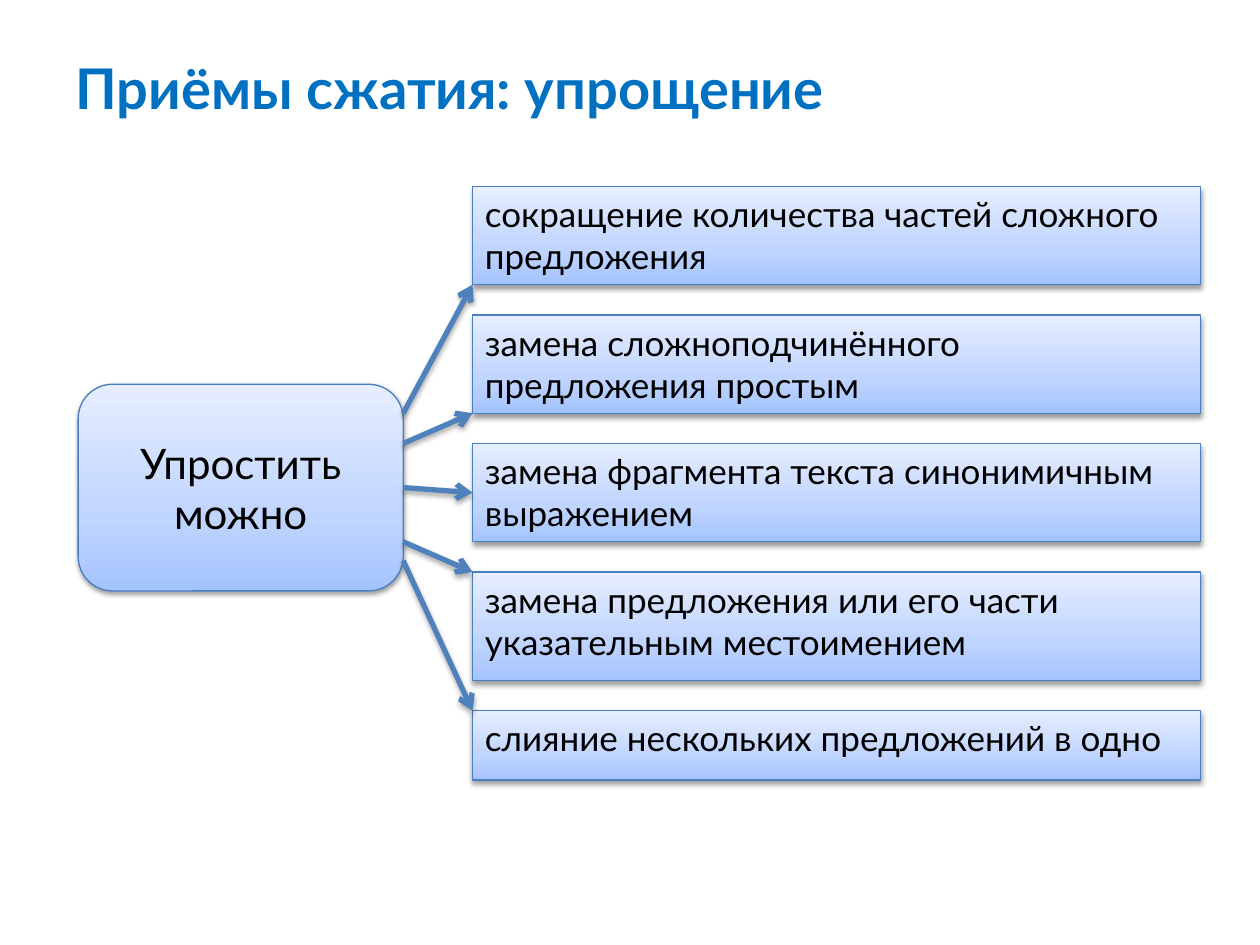
"""Build a slide that lists the ways to simplify a text."""
from pptx import Presentation
from pptx.dml.color import RGBColor
from pptx.enum.shapes import MSO_CONNECTOR, MSO_SHAPE
from pptx.enum.text import MSO_ANCHOR, PP_ALIGN
from pptx.oxml import parse_xml
from pptx.oxml.ns import nsdecls
from pptx.util import Inches, Pt

RECTANGLE, ROUNDED = MSO_SHAPE.RECTANGLE, MSO_SHAPE.ROUNDED_RECTANGLE
STRAIGHT = MSO_CONNECTOR.STRAIGHT
TOP, MIDDLE = MSO_ANCHOR.TOP, MSO_ANCHOR.MIDDLE
LEFT, CENTER = PP_ALIGN.LEFT, PP_ALIGN.CENTER
LEFT_SIDE, RIGHT_SIDE = 1, 3

BLACK = RGBColor(0x00, 0x00, 0x00)
TITLE_BLUE = RGBColor(0x00, 0x70, 0xC0)
OUTLINE_BLUE = RGBColor(0x4B, 0x7E, 0xBC)
ARROW_BLUE = RGBColor(0x4F, 0x81, 0xBD)
GRADIENT = [
    (0, RGBColor(0xA4, 0xC4, 0xFF)),
    (35, RGBColor(0xBF, 0xD4, 0xFF)),
    (100, RGBColor(0xE6, 0xEE, 0xFF)),
]

TITLE = "Приёмы сжатия: упрощение"
TOPIC = "Упростить можно"
# FIELDS
METHODS = [
    ("сокращение количества частей сложного предложения", 0.78, 3.28, 1),
    ("замена сложноподчинённого предложения простым", 0.78, 3.52, 1),
    ("замена фрагмента текста синонимичным выражением", 0.78, None, 0.5),
    ("замена предложения или его части указательным местоимением", 0.86, 4.3, 0),
    ("слияние нескольких предложений в одно", 0.55, 4.45, 0),
]
TITLE_AREA = (0.5, 0.3, 9, 0.79)
TOPIC_AREA = (0.62, 3.05, 2.58, 1.64)
METHOD_LEFT, METHOD_TOP, METHOD_WIDTH, METHOD_GAP = 3.75, 1.48, 5.78, 0.24

TITLE_FONT = {"name": "Lato", "size": Pt(32), "bold": True}
TOPIC_FONT = {"name": "Lato", "size": Pt(24)}
METHOD_FONT = {"name": "Lato", "size": Pt(20)}


def write(shape, text, font_format, color, anchor, alignment):
    frame = shape.text_frame
    frame.word_wrap = True
    frame.vertical_anchor = anchor
    paragraph = frame.paragraphs[0]
    paragraph.alignment = alignment
    run = paragraph.add_run()
    run.text = text
    for name, value in font_format.items():
        setattr(run.font, name, value)
    run.font.color.rgb = color


def add_shadow(shape, opacity, distance):
    shape._element.spPr.append(parse_xml(
        f'<a:effectLst {nsdecls("a")}><a:outerShdw blurRad="{Pt(3.1)}" '
        f'dist="{Pt(distance)}" dir="5400000" rotWithShape="0">'
        f'<a:srgbClr val="{BLACK}"><a:alpha val="{opacity * 1000}"/></a:srgbClr>'
        '</a:outerShdw></a:effectLst>'))


def add_gradient(shape):
    stops = "".join(
        f'<a:gs pos="{position * 1000}"><a:srgbClr val="{color}"/></a:gs>'
        for position, color in GRADIENT)
    shape._element.spPr.prstGeom.addnext(parse_xml(
        f'<a:gradFill {nsdecls("a")} rotWithShape="1"><a:gsLst>{stops}</a:gsLst>'
        '<a:lin ang="16200000" scaled="0"/></a:gradFill>'))


def add_box(slide, kind, area, text, font_format, anchor, alignment):
    shape = slide.shapes.add_shape(kind, *map(Inches, area))
    add_gradient(shape)
    shape.line.color.rgb = OUTLINE_BLUE
    shape.line.width = Pt(0.75)
    add_shadow(shape, 38, 1.6)
    write(shape, text, font_format, BLACK, anchor, alignment)
    return shape


def add_arrow(slide, start, end):
    arrow = slide.shapes.add_connector(STRAIGHT, *map(Inches, start + end))
    arrow.line.color.rgb = ARROW_BLUE
    arrow.line.width = Pt(3)
    arrow.line._get_or_add_ln().append(
        parse_xml(f'<a:tailEnd {nsdecls("a")} type="arrow"/>'))
    add_shadow(arrow, 35, 1.8)
    return arrow


def main():
    presentation = Presentation()
    presentation.slide_width, presentation.slide_height = Inches(10), Inches(7.5)
    slide = presentation.slides.add_slide(presentation.slide_layouts[6])

    title = slide.shapes.add_textbox(*map(Inches, TITLE_AREA))
    write(title, TITLE, TITLE_FONT, TITLE_BLUE, MIDDLE, LEFT)
    topic = add_box(slide, ROUNDED, TOPIC_AREA, TOPIC, TOPIC_FONT, MIDDLE, CENTER)

    topic_left, topic_top, topic_width, topic_height = TOPIC_AREA
    topic_right = topic_left + topic_width
    top = METHOD_TOP
    for text, height, start_y, end_share in METHODS:
        area = (METHOD_LEFT, top, METHOD_WIDTH, height)
        method = add_box(slide, RECTANGLE, area, text, METHOD_FONT, TOP, LEFT)
        joined = start_y is None
        if joined:
            start_y = topic_top + topic_height / 2
        arrow = add_arrow(slide, (topic_right, start_y),
                          (METHOD_LEFT, top + height * end_share))
        if joined:
            arrow.begin_connect(topic, RIGHT_SIDE)
            arrow.end_connect(method, LEFT_SIDE)
        top += height + METHOD_GAP

    presentation.save("out.pptx")


if __name__ == "__main__":
    main()
